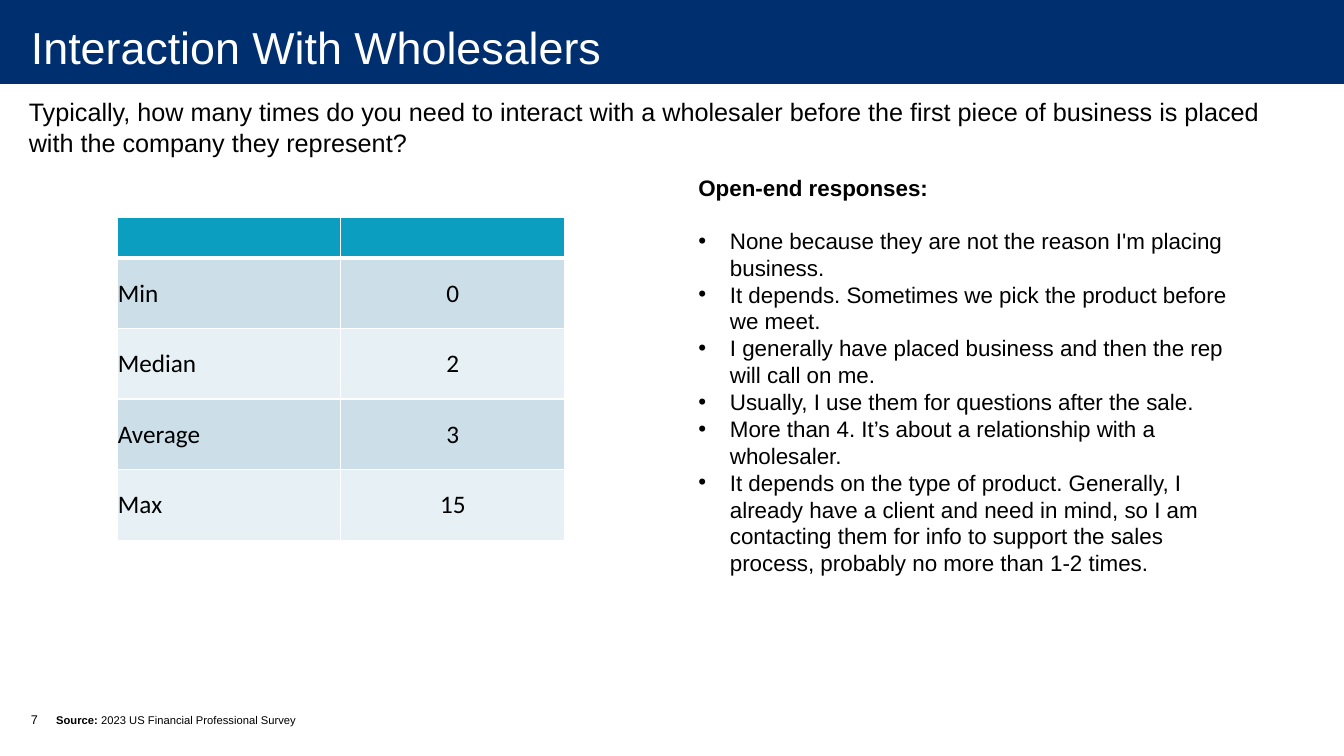
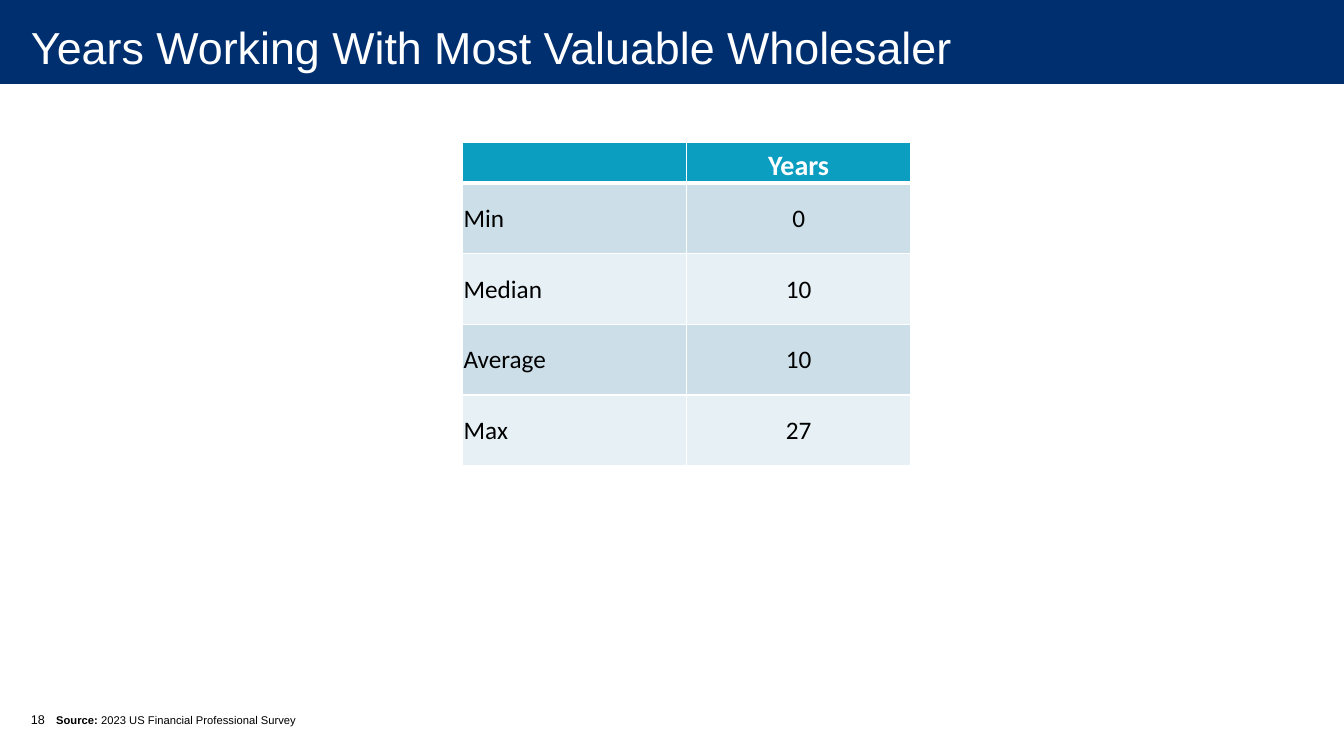
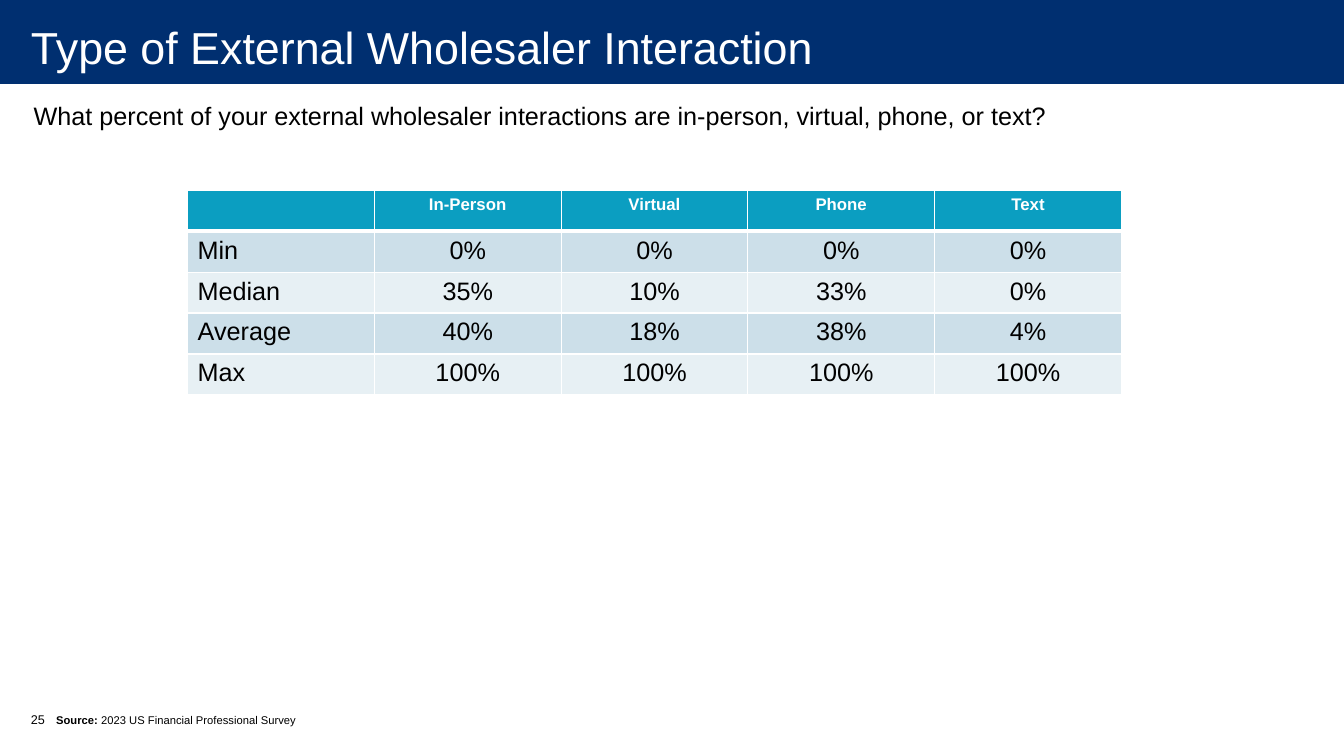
from collections import namedtuple
from dataclasses import dataclass

from lxml.etree import SubElement
from pptx import Presentation
from pptx.dml.color import RGBColor
from pptx.enum.shapes import MSO_SHAPE as Shape
from pptx.enum.text import MSO_ANCHOR as Anchor, MSO_AUTO_SIZE as AutoSize, PP_ALIGN as Align
from pptx.oxml.ns import qn
from pptx.util import Pt

Box = namedtuple("Box", "left top width height")


@dataclass(frozen=True)
class Theme:
    navy: str = "002F70"
    teal: str = "0B9EC1"
    bands: tuple = ("CCDFE9", "E7F0F4")
    white: str = "FFFFFF"
    black: str = "000000"
    font: str = "Arial"
    title: int = 32
    body: int = 18
    responses: int = 16
    page_number: int = 9
    source: int = 8
    thin_line: int = 1
    thick_line: int = 3


@dataclass(frozen=True)
class TableStyle:
    font: str
    header_size: int
    row_height: float
    inset: tuple  # horizontal, top, bottom
    header_anchor: Anchor
    body_anchor: Anchor


THEME = Theme()
PAGE = Box(0, 0, 960, 540)
BAND = Box(0, 0, 960, 60)
TITLE = Box(0.5, 0, 959.5, 66)
SOURCE = Box(33, 471, 421, 52)
PAGE_NUMBER = Box(15, 505, 35, 29)
HEADER_HEIGHT = 29.2
BULLET_INDENT = 22.5

SUMMARY = TableStyle("Calibri", 20, 50.4, (0.7, 0.7, 0), Anchor.BOTTOM, Anchor.MIDDLE)
GRID = TableStyle("Arial", 12, HEADER_HEIGHT, (7.2, 3.6, 3.6), Anchor.TOP, Anchor.TOP)

RESPONSES = [
    "None because they are not the reason I'm placing business.",
    "It depends. Sometimes we pick the product before we meet.",
    "I generally have placed business and then the rep will call on me.",
    "Usually, I use them for questions after the sale.",
    "More than 4. It’s about a relationship with a wholesaler.",
    "It depends on the type of product. Generally, I already have a client and need in mind, "
    "so I am contacting them for info to support the sales process, probably no more than 1-2 times.",
]


def points(box):
    return [Pt(length) for length in box]


def write(para, text, *, size=THEME.body, color=THEME.black, font=THEME.font, bold=False, align=Align.LEFT):
    para.alignment = align
    span = para.add_run()
    span.text = text
    span.font.name = font
    span.font.size = Pt(size)
    span.font.bold = bold
    span.font.color.rgb = RGBColor.from_string(color)


def add_frame(page, box, anchor=Anchor.TOP):
    frame = page.shapes.add_textbox(*points(box)).text_frame
    frame.word_wrap = True
    frame.vertical_anchor = anchor
    return frame


def add_band(page, layout):
    """Draw the title band and hand it to the layout, behind everything else."""
    band = page.shapes.add_shape(Shape.RECTANGLE, *points(BAND))
    band.shadow.inherit = False
    band.fill.solid()
    band.fill.fore_color.rgb = RGBColor.from_string(THEME.navy)
    band.line.fill.background()
    layout.shapes.element.insert(2, band.element)


def add_title(page, text):
    title = page.shapes.title
    title.left, title.top, title.width, title.height = points(TITLE)
    frame = title.text_frame
    frame.auto_size = AutoSize.NONE
    frame.word_wrap = True
    frame.vertical_anchor = Anchor.MIDDLE
    frame.margin_left, frame.margin_right = Pt(21.6), Pt(14.4)
    frame.margin_top = frame.margin_bottom = 0
    write(frame.paragraphs[0], text, size=THEME.title, color=THEME.white)


def add_footer(page, number):
    para = add_frame(page, SOURCE, Anchor.BOTTOM).paragraphs[0]
    write(para, "Source: ", size=THEME.source, bold=True)
    write(para, "2023 US Financial Professional Survey", size=THEME.source)
    write(add_frame(page, PAGE_NUMBER).paragraphs[0], str(number), size=THEME.page_number)


def add_page(deck, title, number):
    page = deck.slides.add_slide(deck.slide_layouts.get_by_name("Title Only"))
    add_title(page, title)
    add_footer(page, number)
    return page


def add_question(page, box, text):
    write(add_frame(page, box).paragraphs[0], text)


def add_bullet(para):
    props = para._p.get_or_add_pPr()
    props.set("marL", str(Pt(BULLET_INDENT)))
    props.set("indent", str(-Pt(BULLET_INDENT)))
    SubElement(props, qn("a:buFont"), typeface=THEME.font)
    SubElement(props, qn("a:buChar"), char="•")


def add_responses(page, box, heading, responses):
    frame = add_frame(page, box)
    first = frame.paragraphs[0]
    first.space_after = Pt(18.4)
    write(first, heading, size=THEME.responses, bold=True)
    for response in responses:
        para = frame.add_paragraph()
        add_bullet(para)
        write(para, response, size=THEME.responses)


def add_borders(cell, row):
    """Rule all four sides in white, thicker between the header and the body."""
    thick_side = {0: "B", 1: "T"}.get(row)
    props = cell._tc.get_or_add_tcPr()
    for side in "LRTB":
        width = THEME.thick_line if side == thick_side else THEME.thin_line
        line = SubElement(props, qn(f"a:ln{side}"), w=str(Pt(width)))
        SubElement(SubElement(line, qn("a:solidFill")), qn("a:srgbClr"), val=THEME.white)


def fill_cell(cell, text, row, column, style):
    header = row == 0
    add_borders(cell, row)
    cell.fill.solid()
    fill = THEME.teal if header else THEME.bands[(row - 1) % 2]
    cell.fill.fore_color.rgb = RGBColor.from_string(fill)
    side, cell.margin_top, cell.margin_bottom = points(style.inset)
    cell.margin_left = cell.margin_right = side
    cell.vertical_anchor = style.header_anchor if header else style.body_anchor
    if text:
        write(cell.text_frame.paragraphs[0], text, font=style.font, bold=header,
              size=style.header_size if header else THEME.body,
              color=THEME.white if header else THEME.black,
              align=Align.CENTER if column else Align.LEFT)


def add_statistics(page, left, top, column_width, headers, values, style):
    """Place a table with one row for each statistic below its header row."""
    labels = ("Min", "Median", "Average", "Max")
    rows = [["", *headers]] + [[label, *line] for label, line in zip(labels, values)]
    columns = len(rows[0])
    box = Box(left, top, column_width * columns, HEADER_HEIGHT + style.row_height * len(labels))
    table = page.shapes.add_table(len(rows), columns, *points(box)).table
    table.horz_banding = False
    for column in table.columns:
        column.width = Pt(column_width)
    for r, texts in enumerate(rows):
        table.rows[r].height = Pt(style.row_height if r else HEADER_HEIGHT)
        for c, text in enumerate(texts):
            fill_cell(table.cell(r, c), text, r, c, style)


def build_interaction_count(deck):
    page = add_page(deck, "Interaction With Wholesalers", 7)
    add_question(page, Box(13.5, 65.5, 921.5, 51),
                 "Typically, how many times do you need to interact with a wholesaler before the first "
                 "piece of business is placed with the company they represent?")
    add_statistics(page, 83.5, 155, 160, [""], [["0"], ["2"], ["3"], ["15"]], SUMMARY)
    add_responses(page, Box(491.8, 121, 404, 298), "Open-end responses:", RESPONSES)
    return page


def build_years_working(deck):
    page = add_page(deck, "Years Working With Most Valuable Wholesaler", 18)
    add_statistics(page, 330.5, 101.7, 160, ["Years"], [["0"], ["10"], ["10"], ["27"]], SUMMARY)


def build_interaction_type(deck):
    page = add_page(deck, "Type of External Wholesaler Interaction", 25)
    add_question(page, Box(17, 68, 921.5, 29),
                 "What percent of your external wholesaler interactions are in-person, virtual, phone, or text?")
    shares = [(0, 0, 0, 0), (35, 10, 33, 0), (40, 18, 38, 4), (100, 100, 100, 100)]
    add_statistics(page, 134, 136, 133.4, ["In-Person", "Virtual", "Phone", "Text"],
                   [[f"{share}%" for share in line] for line in shares], GRID)


def main():
    deck = Presentation()
    deck.slide_width, deck.slide_height = Pt(PAGE.width), Pt(PAGE.height)
    first_page = build_interaction_count(deck)
    add_band(first_page, first_page.slide_layout)
    build_years_working(deck)
    build_interaction_type(deck)
    deck.save("out.pptx")


if __name__ == "__main__":
    main()
